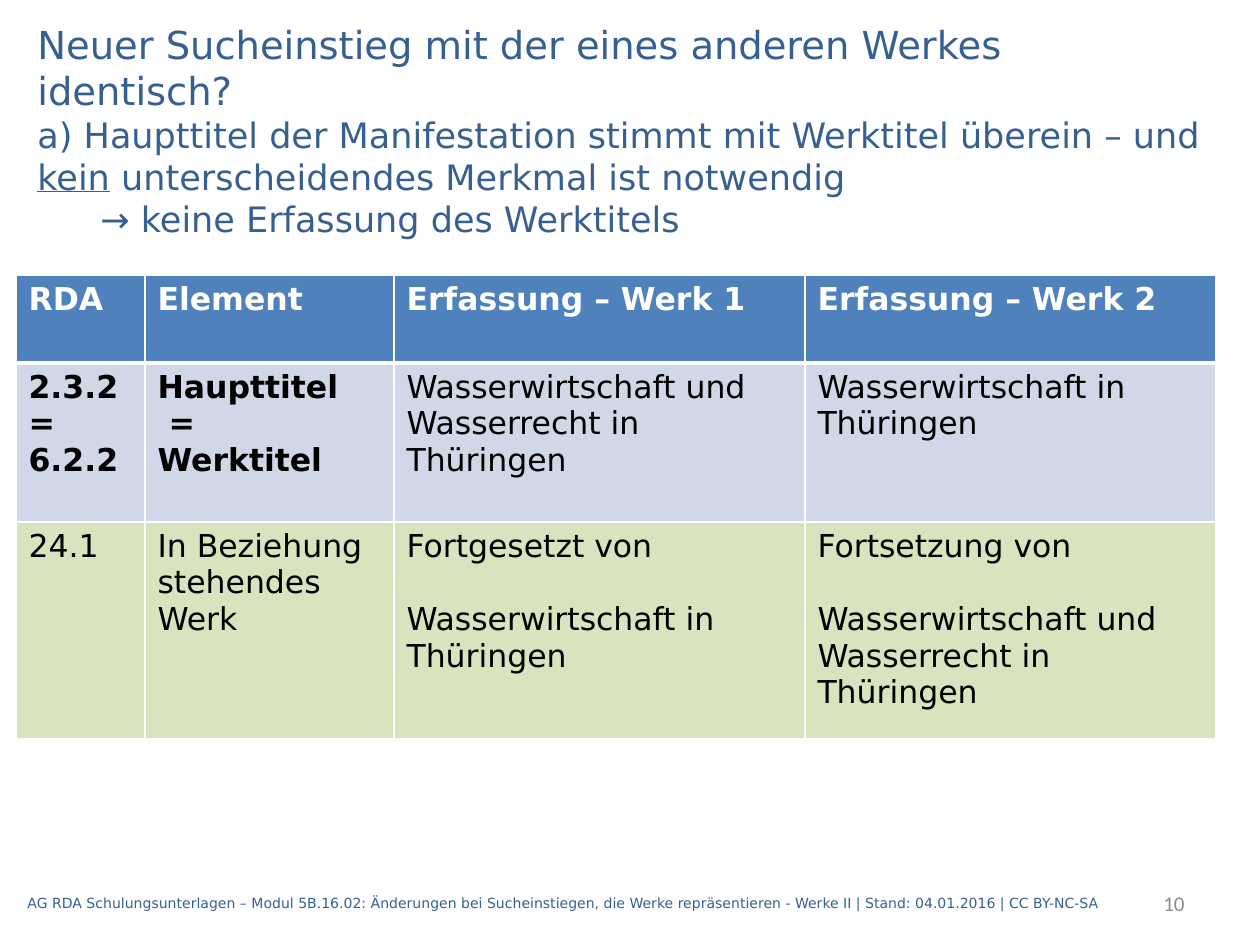
from dataclasses import dataclass

from lxml.etree import SubElement
from pptx import Presentation
from pptx.dml.color import RGBColor
from pptx.enum.text import MSO_ANCHOR, PP_ALIGN
from pptx.oxml.ns import qn
from pptx.util import Emu, Pt


@dataclass(frozen=True)
class Theme:
    font: str = "DejaVu Sans"
    plain: str = "Calibri"
    blue: str = "376092"
    gray: str = "8C8C8C"
    white: str = "FFFFFF"
    black: str = "000000"
    head: str = "4F81BD"
    pale: str = "D0D8E8"
    green: str = "D7E4BD"
    title: int = 22
    sub: int = 20
    body: int = 18
    num: int = 12
    foot: int = 8
    gap: int = 21
    thin: int = 1
    thick: int = 3


@dataclass(frozen=True)
class Box:
    left: int
    top: int
    width: int
    height: int


@dataclass(frozen=True)
class Row:
    height: int
    fill: str
    color: str
    bold: int  # number of leading bold cells
    cells: tuple
    gap: int = 0  # space between paragraphs, in points


T = Theme()
WIDTHS = (129, 249, 411, 411)
ROWS = (
    Row(88, T.head, T.white, 4,
        ("RDA", "Element", "Erfassung – Werk 1", "Erfassung – Werk 2")),
    Row(159, T.pale, T.black, 2,
        ("2.3.2 =\n6.2.2", "Haupttitel\n =\nWerktitel",
         "Wasserwirtschaft und Wasserrecht in Thüringen",
         "Wasserwirtschaft in Thüringen")),
    Row(217, T.green, T.black, 0,
        ("24.1", "In Beziehung stehendes Werk",
         "Fortgesetzt von\nWasserwirtschaft in Thüringen",
         "Fortsetzung von\nWasserwirtschaft und Wasserrecht in Thüringen"),
        T.gap),
)


def px(n: int) -> Emu:
    return Emu(round(n * 914400 / 126))


def style(run, size: int, color: str, font: str = T.font,
          bold: bool = False) -> None:
    run.font.size = Pt(size)
    run.font.name = font
    run.font.bold = bold
    run.font.color.rgb = RGBColor.from_string(color)


def add_text(slide, box: Box, text: str, size: int, color: str,
             font: str = T.font, align=PP_ALIGN.LEFT):
    shape = slide.shapes.add_textbox(
        px(box.left), px(box.top), px(box.width), px(box.height))
    frame = shape.text_frame
    frame.word_wrap = True
    frame.vertical_anchor = MSO_ANCHOR.MIDDLE
    frame.text = text
    for para in frame.paragraphs:
        para.alignment = align
        for run in para.runs:
            style(run, size, color, font)
    return frame


def add_title(slide) -> None:
    frame = add_text(
        slide, Box(25, 16, 1191, 228),
        "Neuer Sucheinstieg mit der eines anderen Werkes identisch?\n"
        "a) Haupttitel der Manifestation stimmt mit Werktitel überein – und \n"
        "\t→ keine Erfassung des Werktitels", T.sub, T.blue)
    first, claim, _ = frame.paragraphs
    first.runs[0].font.size = Pt(T.title)
    for text, line in (("kein", True),
                       (" unterscheidendes Merkmal ist notwendig", False)):
        run = claim.add_run()
        run.text = text
        style(run, T.sub, T.blue)
        run.font.underline = line


def set_edge(cell, side: str, width: int) -> None:
    props = cell._tc.get_or_add_tcPr()
    line = SubElement(props, qn(f"a:ln{side}"), w=str(Pt(width)))
    fill = SubElement(line, qn("a:solidFill"))
    SubElement(fill, qn("a:srgbClr"), val=T.white)


def fill_cell(cell, text: str, row: Row, bold: bool, edges: dict) -> None:
    # Edges come before the fill in the cell properties
    for side, width in edges.items():
        set_edge(cell, side, width)
    cell.fill.solid()
    cell.fill.fore_color.rgb = RGBColor.from_string(row.fill)
    cell.text_frame.text = text
    for i, para in enumerate(cell.text_frame.paragraphs):
        if i and row.gap:
            para.space_before = Pt(row.gap)
        for run in para.runs:
            style(run, T.body, row.color, bold=bold)


def add_grid(slide, left: int, top: int) -> None:
    high = sum(row.height for row in ROWS)
    table = slide.shapes.add_table(
        len(ROWS), len(WIDTHS), px(left), px(top),
        px(sum(WIDTHS)), px(high)).table
    for col, width in zip(table.columns, WIDTHS):
        col.width = px(width)
    for r, row in enumerate(ROWS):
        table.rows[r].height = px(row.height)
        edges = {"L": T.thin, "R": T.thin,
                 "T": T.thick if r == 1 else T.thin,
                 "B": T.thick if r == 0 else T.thin}
        for c, text in enumerate(row.cells):
            fill_cell(table.cell(r, c), text, row, c < row.bold, edges)


def main() -> None:
    deck = Presentation()
    deck.slide_width, deck.slide_height = px(1260), px(945)
    slide = deck.slides.add_slide(deck.slide_layouts[6])

    # Heading and table
    add_title(slide)
    add_grid(slide, 16, 275)

    # Footer and page number
    add_text(slide, Box(15, 878, 1150, 50),
             "AG RDA Schulungsunterlagen – Modul 5B.16.02: Änderungen bei "
             "Sucheinstiegen, die Werke repräsentieren - Werke II | "
             "Stand: 04.01.2016 | CC BY-NC-SA", T.foot, T.blue)
    add_text(slide, Box(997, 878, 200, 50), "10", T.num, T.gray,
             T.plain, PP_ALIGN.RIGHT)
    deck.save("out.pptx")


if __name__ == "__main__":
    main()
